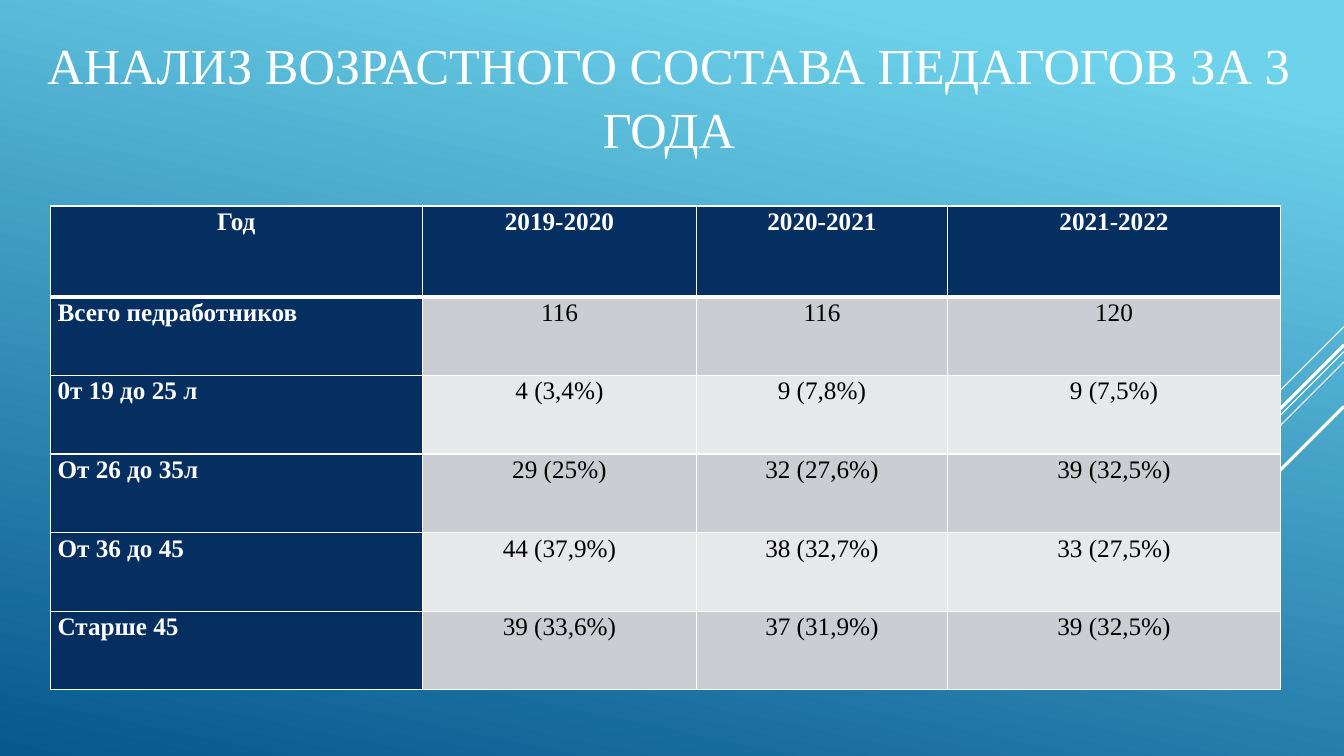
import dataclasses

import pptx
import pptx.dml.color
import pptx.enum.shapes
import pptx.enum.text
import pptx.oxml
import pptx.oxml.ns
import pptx.util
from pptx.util import Cm

ALIGN = pptx.enum.text.PP_ALIGN
ANCHOR = pptx.enum.text.MSO_ANCHOR


@dataclasses.dataclass(frozen=True)
class Theme:
    font: str = "Times New Roman"
    title_size: int = 36
    table_size: int = 18
    white: str = "FFFFFF"
    black: str = "000000"
    navy: str = "052F61"
    bands: tuple = ("CCCDD2", "E7E8EA")
    sky: tuple = ((0.1, "6ED2EB"), (1.0, "06588E"))


THEME = Theme()


def rgb(value):
    return pptx.dml.color.RGBColor.from_string(value)


def add_text(para, text, size, color, bold=False):
    span = para.add_run()
    span.text = text
    span.font.name = THEME.font
    span.font.size = pptx.util.Pt(size)
    span.font.bold = bold
    span.font.color.rgb = rgb(color)


# Deck and gradient background
deck = pptx.Presentation()
deck.slide_width, deck.slide_height = Cm(33.87), Cm(19.05)
page = deck.slides.add_slide(deck.slide_layouts[5])
backdrop = page.background.fill
backdrop.gradient()
backdrop.gradient_angle = 360 - 102
for stop, (position, color) in zip(backdrop.gradient_stops, THEME.sky):
    stop.position = position
    stop.color.rgb = rgb(color)

# Diagonal rays from the right edge: start height, run to the left, width
rays = [
    (8.23, 2.54, 0.75),
    (8.86, 8.28, 0.75),
    (9.12, 5.26, 0.75),
    (8.69, 4.85, 2.25),
    (10.24, 3.53, 2.25),
]
for top, run, width in rays:
    ray = page.shapes.add_connector(
        pptx.enum.shapes.MSO_CONNECTOR.STRAIGHT,
        deck.slide_width, Cm(top), deck.slide_width - Cm(run), Cm(top + run))
    ray.line.color.rgb = rgb(THEME.white)
    ray.line.width = pptx.util.Pt(width)
    ray._element.spPr.append(pptx.oxml.parse_xml(
        f'<a:effectLst {pptx.oxml.ns.nsdecls("a")}/>'))

# Title
title = page.shapes.title
title.left, title.top = Cm(0.74), Cm(0.3)
title.width, title.height = Cm(32.23), Cm(4.19)
title.text_frame.word_wrap = True
title.text_frame.auto_size = pptx.enum.text.MSO_AUTO_SIZE.NONE
title.text_frame.vertical_anchor = ANCHOR.MIDDLE
para = title.text_frame.paragraphs[0]
para.alignment = ALIGN.CENTER
para.line_spacing = 1.05
add_text(para, "АНАЛИЗ ВОЗРАСТНОГО СОСТАВА ПЕДАГОГОВ ЗА 3 ГОДА",
         THEME.title_size, THEME.white)

# Table of age groups by year
age_rows = [
    ("Год", "2019-2020", "2020-2021", "2021-2022"),
    ("Всего педработников", "116", "116", "120"),
    ("0т 19 до 25 л", "4 (3,4%)", "9 (7,8%)", "9 (7,5%)"),
    ("От 26 до 35л", "29 (25%)", "32 (27,6%)", "39 (32,5%)"),
    ("От 36 до 45", "44 (37,9%)", "38 (32,7%)", "33 (27,5%)"),
    ("Старше 45", "39 (33,6%)", "37 (31,9%)", "39 (32,5%)"),
]
column_widths = [9.37, 6.92, 6.31, 8.41]
row_heights = [2.29] + [1.98] * 5
table = page.shapes.add_table(
    len(age_rows), len(column_widths), Cm(1.27), Cm(5.19),
    Cm(sum(column_widths)), Cm(sum(row_heights))).table
for column, width in zip(table.columns, column_widths):
    column.width = Cm(width)
for row, height in zip(table.rows, row_heights):
    row.height = Cm(height)

for row_index, values in enumerate(age_rows):
    for column_index, value in enumerate(values):
        cell = table.cell(row_index, column_index)
        is_header = row_index == 0
        is_label = column_index == 0
        is_dark = is_header or is_label

        # White borders, heavier under the header
        thick_side = {0: "lnB", 1: "lnT"}.get(row_index)
        for side in ("lnL", "lnR", "lnT", "lnB"):
            width = pptx.util.Pt(3 if side == thick_side else 1)
            cell._tc.get_or_add_tcPr().append(pptx.oxml.parse_xml(
                f'<a:{side} {pptx.oxml.ns.nsdecls("a")} w="{width}"><a:solidFill>'
                f'<a:srgbClr val="{THEME.white}"/></a:solidFill></a:{side}>'))

        cell.fill.solid()
        cell.fill.fore_color.rgb = rgb(
            THEME.navy if is_dark else THEME.bands[(row_index - 1) % 2])
        cell.margin_left = cell.margin_right = Cm(0.18)
        cell.margin_top = cell.margin_bottom = Cm(0)
        cell.vertical_anchor = ANCHOR.TOP
        para = cell.text_frame.paragraphs[0]
        para.alignment = ALIGN.JUSTIFY if is_label and not is_header else ALIGN.CENTER
        para.line_spacing = 1.07
        add_text(para, value, THEME.table_size,
                 THEME.white if is_dark else THEME.black, bold=is_dark)

deck.save("out.pptx")
